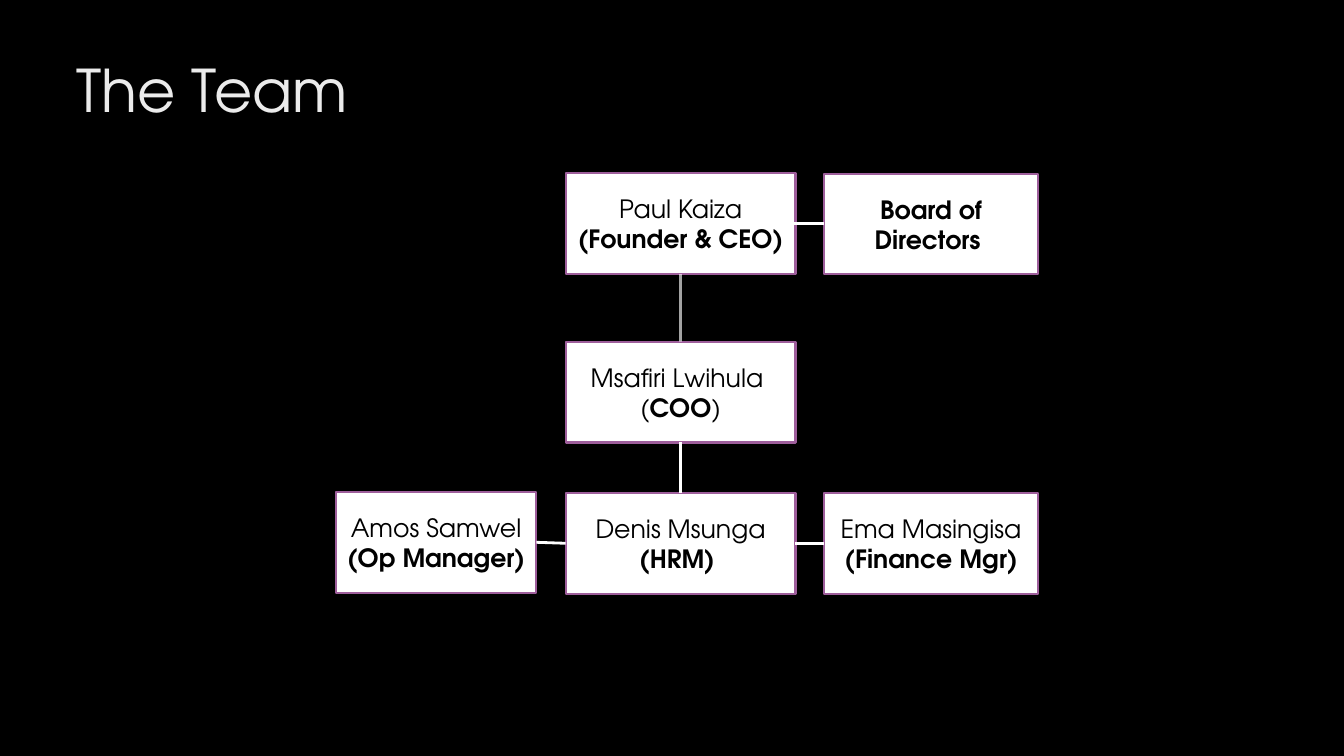
from lxml import etree
from pptx import Presentation
from pptx.dml.color import RGBColor
from pptx.enum.shapes import MSO_CONNECTOR, MSO_SHAPE
from pptx.enum.text import MSO_ANCHOR, PP_ALIGN
from pptx.oxml.ns import qn
from pptx.util import Inches, Pt

COLORS = {"back": "000000", "title": "EBEBEB", "card": "FFFFFF",
          "border": "9E5E9B", "ink": "000000", "link": "FFFFFF"}
FONT = "TeX Gyre Adventor"

# Grid: left and width of each column, top and height of each row
COLUMNS = {"left": (3.33, 1.99), "middle": (5.61, 2.28), "right": (8.17, 2.13)}
ROWS = {"board": (1.73, 0.99), "chief": (1.72, 1), "operations": (3.39, 1),
        "manager": (4.88, 1), "staff": (4.89, 1)}


def write(box, paragraphs, size=18, color="ink", align=PP_ALIGN.CENTER,
          anchor=MSO_ANCHOR.MIDDLE):
    """Fill a box with paragraphs, each a list of (text, bold) spans."""
    frame = box.text_frame
    frame.word_wrap = True
    frame.vertical_anchor = anchor
    for index, spans in enumerate(paragraphs):
        para = frame.add_paragraph() if index else frame.paragraphs[0]
        para.alignment = align
        for text, bold in spans:
            span = para.add_run()
            span.text = text
            span.font.name = FONT
            span.font.size = Pt(size)
            span.font.bold = bold
            span.font.color.rgb = RGBColor.from_string(COLORS[color])


def connect(start, end, opacity=100):
    """Draw a plain line between two points given in inches."""
    line = page.shapes.add_connector(MSO_CONNECTOR.STRAIGHT,
                                     *map(Inches, (*start, *end)))
    line.line.width = Pt(2)
    line.line.color.rgb = RGBColor.from_string(COLORS["link"])
    if opacity < 100:
        color = line.line._get_or_add_ln().find(".//" + qn("a:srgbClr"))
        etree.SubElement(color, qn("a:alpha"), val=str(opacity * 1000))
    etree.SubElement(line._element.spPr, qn("a:effectLst"))


deck = Presentation()
deck.slide_width, deck.slide_height = Inches(13.33), Inches(7.5)
page = deck.slides.add_slide(deck.slide_layouts[6])
page.background.fill.solid()
page.background.fill.fore_color.rgb = RGBColor.from_string(COLORS["back"])

# Title
title = page.shapes.add_textbox(*map(Inches, (0.66, 0.48, 10.29, 0.9)))
write(title, [[("The Team", False)]], size=42, color="title",
      align=PP_ALIGN.LEFT, anchor=MSO_ANCHOR.TOP)

# Cards of the organisation chart
cards = [
    ("middle", "chief", [[("Paul Kaiza", False)], [("(Founder & CEO) ", True)]]),
    ("middle", "staff", [[("Denis Msunga", False)], [("(HRM) ", True)]]),
    ("left", "manager", [[("Amos Samwel", False)], [("(Op Manager) ", True)]]),
    ("middle", "operations", [[("Msafiri Lwihula ", False)],
                              [("(", False), ("COO", True), (")", False)]]),
    ("right", "staff", [[("Ema Masingisa", False)], [("(Finance Mgr)", True)]]),
    ("right", "board", [[("Board of Directors ", True)]]),
]
for column, row, paragraphs in cards:
    left, width = COLUMNS[column]
    top, height = ROWS[row]
    card = page.shapes.add_shape(MSO_SHAPE.RECTANGLE,
                                 *map(Inches, (left, top, width, height)))
    card.shadow.inherit = False
    card.fill.solid()
    card.fill.fore_color.rgb = RGBColor.from_string(COLORS["card"])
    card.line.color.rgb = RGBColor.from_string(COLORS["border"])
    card.line.width = Pt(1.5)
    write(card, paragraphs)

# Links between the cards
edges = {name: (left, left + width) for name, (left, width) in COLUMNS.items()}
bottoms = {name: top + height for name, (top, height) in ROWS.items()}
centers = {name: top + height / 2 for name, (top, height) in ROWS.items()}
axis = sum(edges["middle"]) / 2
connect((axis, bottoms["chief"]), (axis, ROWS["operations"][0]), opacity=64)
connect((axis, bottoms["operations"]), (axis, ROWS["staff"][0]))
connect((edges["middle"][1], centers["staff"]),
        (edges["right"][0], centers["staff"]))
connect((edges["left"][1], centers["manager"]),
        (edges["middle"][0], centers["staff"]))
connect((edges["right"][0], centers["chief"]), (axis, centers["chief"]))

deck.save("out.pptx")
